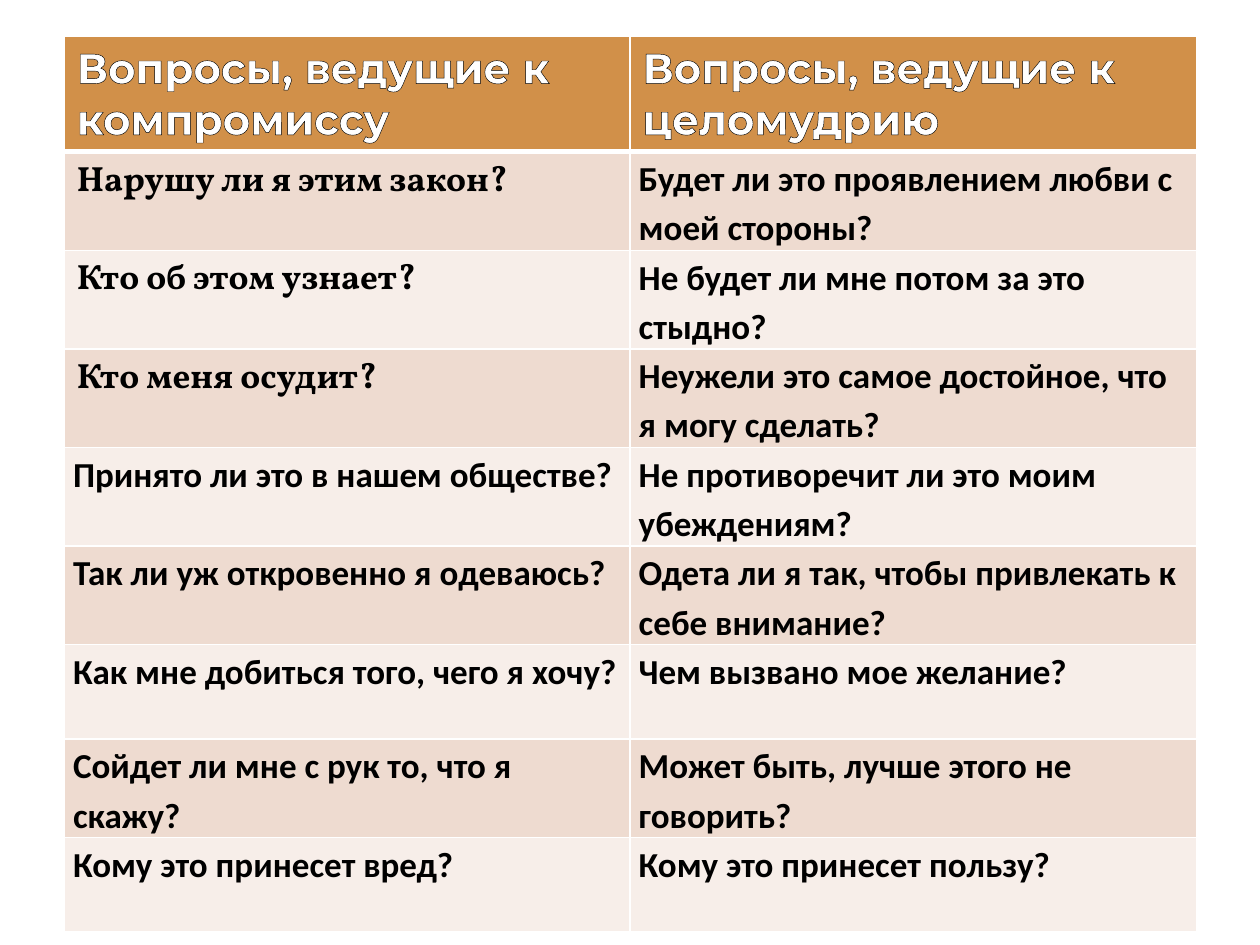
from lxml.etree import SubElement, fromstring
from pptx import Presentation
from pptx.dml.color import RGBColor
from pptx.oxml.ns import nsdecls, qn
from pptx.util import Inches, Pt

HEADERS = ["Вопросы, ведущие к компромиссу", "Вопросы, ведущие к целомудрию"]
QUESTIONS = [
    ("Нарушу ли я этим закон?", "Будет ли это проявлением любви с моей стороны?"),
    ("Кто об этом узнает?", "Не будет ли мне потом за это стыдно?"),
    ("Кто меня осудит?", "Неужели это самое достойное, что я могу сделать?"),
    ("Принято ли это в нашем обществе?", "Не противоречит ли это моим убеждениям?"),
    ("Так ли уж откровенно я одеваюсь?", "Одета ли я так, чтобы привлекать к себе внимание?"),
    ("Как мне добиться того, чего я хочу?", "Чем вызвано мое желание?"),
    ("Сойдет ли мне с рук то, что я скажу?", "Может быть, лучше этого не говорить?"),
    ("Кому это принесет вред?", "Кому это принесет пользу?"),
]
SERIF_ROWS = 3
BANDS = ["EEDBD0", "F7EEE9"]
HEAD = {"name": "Montserrat", "size": Pt(24), "bold": True}
SERIF = {"name": "Vollkorn", "size": Pt(20), "bold": True}
BODY = {"name": "Calibri", "size": Pt(20), "bold": True}
TIGHT = {"margin_left": Inches(0.07), "margin_right": Inches(0.07),
         "margin_top": 0, "margin_bottom": 0}
LEFT, TOP, ROW_H = 0.51, 0.29, 0.75
COLS = [4.49, 4.5]


def rgb(value):
    return RGBColor.from_string(value)


def assign(obj, values):
    for name, value in values.items():
        setattr(obj, name, value)


def line_xml(tag, color, width):
    return fromstring(
        f'<a:{tag} {nsdecls("a")} w="{Pt(width)}"><a:solidFill>'
        f'<a:srgbClr val="{color}"/></a:solidFill></a:{tag}>')


def set_borders(cell, widths):
    tc_pr = cell._tc.get_or_add_tcPr()
    for i, (tag, width) in enumerate(zip(("lnL", "lnR", "lnT", "lnB"), widths)):
        tc_pr.insert(i, line_xml(tag, "FFFFFF", width))


def write_cell(cell, text, fill, font, color, widths):
    cell.fill.solid()
    cell.fill.fore_color.rgb = rgb(fill)
    set_borders(cell, widths)
    p = cell.text_frame.paragraphs[0]
    r = p.add_run()
    r.text = text
    assign(r.font, font)
    r.font.color.rgb = rgb(color)
    for tag in ("a:ea", "a:cs"):
        SubElement(r.font._element, qn(tag)).set("typeface", font["name"])
    if font is HEAD:
        r.font._element.insert(0, line_xml("ln", "000000", 0.75))
    if font is BODY:
        assign(cell, TIGHT)
        p.line_spacing = 1.15


def main():
    prs = Presentation()
    prs.slide_width, prs.slide_height = Inches(10), Inches(7.5)
    s = prs.slides.add_slide(prs.slide_layouts[6])
    n_rows = len(QUESTIONS) + 1
    table = s.shapes.add_table(
        n_rows, len(COLS), Inches(LEFT), Inches(TOP),
        Inches(sum(COLS)), Inches(n_rows * ROW_H)).table
    for column, width in zip(table.columns, COLS):
        column.width = Inches(width)
    for row in table.rows:
        row.height = Inches(ROW_H)

    for c, text in enumerate(HEADERS):
        write_cell(table.cell(0, c), text, "D19049", HEAD, "FFFFFF", (1, 1, 1, 3))
    for i, pair in enumerate(QUESTIONS):
        for c, text in enumerate(pair):
            font = SERIF if c == 0 and i < SERIF_ROWS else BODY
            widths = (1, 1, 1 if i else 3, 1)
            write_cell(table.cell(i + 1, c), text, BANDS[i % 2], font, "000000", widths)
    prs.save("out.pptx")


if __name__ == "__main__":
    main()
